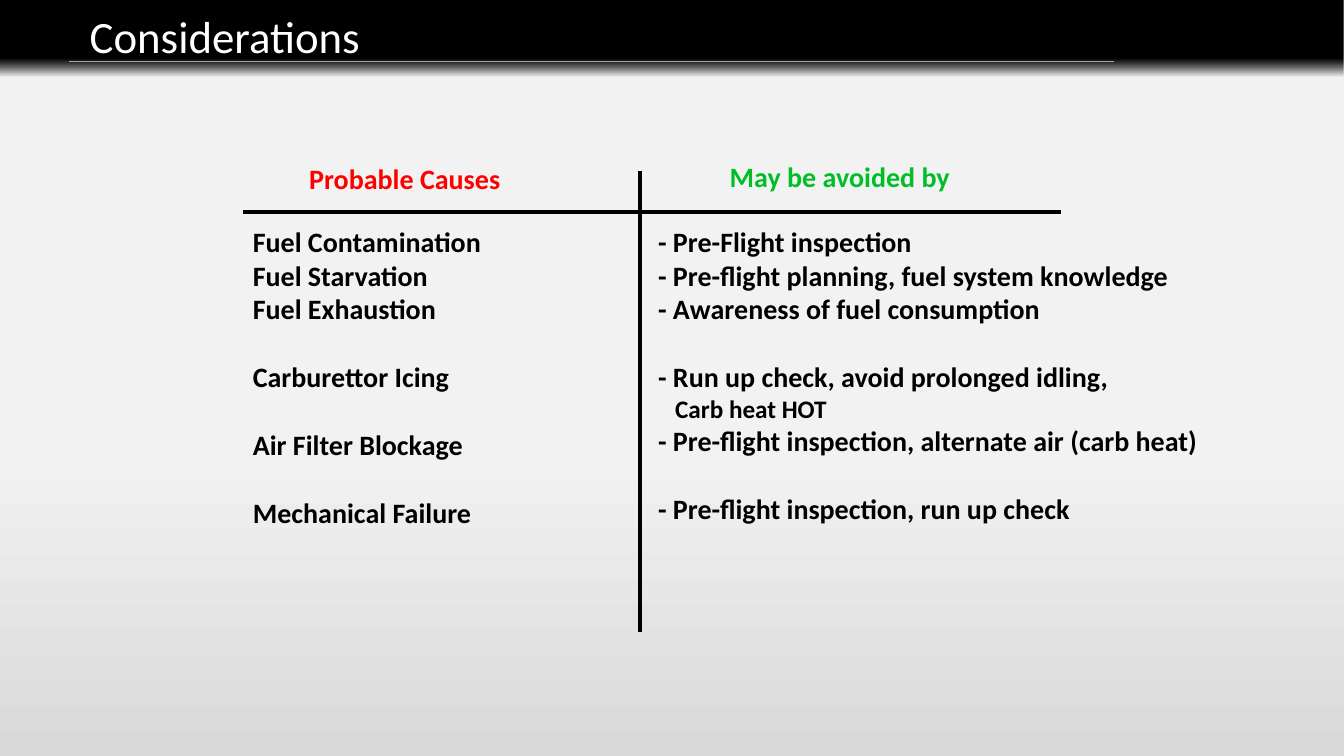
from dataclasses import dataclass

from lxml.etree import SubElement
from pptx import Presentation
from pptx.dml.color import RGBColor
from pptx.dml.fill import FillFormat
from pptx.enum.shapes import MSO_CONNECTOR, MSO_SHAPE
from pptx.enum.text import MSO_ANCHOR, MSO_AUTO_SIZE, PP_ALIGN
from pptx.oxml.ns import qn
from pptx.slide import Slide
from pptx.text.text import TextFrame
from pptx.util import Pt

FONT = "Calibri"
BLACK, WHITE, RED, GREEN, GREY = "000000", "FFFFFF", "FF0000", "00BE28", "A6A6A6"
BLANK_LINE = 24.4
SLIDE_WIDTH, SLIDE_HEIGHT = 960, 540


@dataclass
class Line:
    text: str
    size: float = 20
    before: float = 0
    indent: float = 0


@dataclass
class TextBlock:
    left: float
    top: float
    width: float
    height: float
    lines: list[Line]
    color: str = BLACK
    bold: bool = True


@dataclass
class Rule:
    x1: float
    y1: float
    x2: float
    y2: float
    color: str = BLACK
    weight: float = 3


@dataclass
class Stop:
    percent: int
    color: str
    alpha: int = 100


TITLE = TextBlock(56.9, 2.9, 738.7, 46.1, [Line("Considerations", 32)], WHITE, False)
TITLE_RULE = Rule(49, 43.9, 795.6, 43.9, GREY, 0.75)
CHART_RULES = [Rule(457.2, 122.4, 457.2, 451.4), Rule(173.5, 151.2, 758.2, 151.2)]
BLOCKS = [
    TextBlock(213.8, 111.6, 193, 31.7, [Line("Probable Causes")], RED),
    TextBlock(514.1, 110.2, 238.3, 31.7, [Line("May be avoided by")], GREEN),
    TextBlock(173.5, 157, 280, 225.4, [
        Line("Fuel Contamination"),
        Line("Fuel Starvation"),
        Line("Fuel Exhaustion"),
        Line("Carburettor Icing", before=BLANK_LINE),
        Line("Air Filter Blockage", before=BLANK_LINE),
        Line("Mechanical Failure", before=BLANK_LINE),
    ]),
    TextBlock(463, 157, 403.2, 223.2, [
        Line("- Pre-Flight inspection"),
        Line("- Pre-flight planning, fuel system knowledge"),
        Line("- Awareness of fuel consumption"),
        Line("- Run up check, avoid prolonged idling,", before=BLANK_LINE),
        Line("Carb heat HOT", size=18, indent=12.2),
        Line("- Pre-flight inspection, alternate air (carb heat)"),
        Line("- Pre-flight inspection, run up check", before=BLANK_LINE),
    ]),
]
BACKGROUND = [Stop(0, "F2F2F2"), Stop(60, "F2F2F2"), Stop(100, "D9D9D9")]
BAND = [Stop(0, BLACK), Stop(76, BLACK), Stop(88, BLACK, 55), Stop(100, BLACK, 0)]


def rgb(value: str) -> RGBColor:
    return RGBColor.from_string(value)


def set_gradient(fill: FillFormat, owner, stops: list[Stop]) -> None:
    """Fill top to bottom; owner is the XML element that holds the fill."""
    fill.gradient()
    fill.gradient_angle = 270
    stop_list = next(owner.iter(qn("a:gsLst")))
    for old in list(stop_list):
        stop_list.remove(old)
    for stop in stops:
        gs = SubElement(stop_list, qn("a:gs"), pos=str(stop.percent * 1000))
        color = SubElement(gs, qn("a:srgbClr"), val=stop.color)
        if stop.alpha < 100:
            SubElement(color, qn("a:alpha"), val=str(stop.alpha * 1000))


def write_text(tf: TextFrame, block: TextBlock) -> None:
    frame_format = {
        "word_wrap": True,
        "auto_size": MSO_AUTO_SIZE.NONE,
        "vertical_anchor": MSO_ANCHOR.TOP,
    }
    for name, value in frame_format.items():
        setattr(tf, name, value)
    for i, line in enumerate(block.lines):
        p = tf.paragraphs[0] if i == 0 else tf.add_paragraph()
        p.alignment = PP_ALIGN.LEFT
        p.space_before = Pt(line.before)
        if line.indent:
            p._p.get_or_add_pPr().set("marL", str(Pt(line.indent)))
        r = p.add_run()
        r.text = line.text
        font_format = {"name": FONT, "size": Pt(line.size), "bold": block.bold}
        for name, value in font_format.items():
            setattr(r.font, name, value)
        r.font.color.rgb = rgb(block.color)


def add_block(s: Slide, block: TextBlock) -> None:
    box = (block.left, block.top, block.width, block.height)
    write_text(s.shapes.add_textbox(*map(Pt, box)).text_frame, block)


def add_rule(s: Slide, rule: Rule) -> None:
    ends = map(Pt, (rule.x1, rule.y1, rule.x2, rule.y2))
    cxn = s.shapes.add_connector(MSO_CONNECTOR.STRAIGHT, *ends)
    cxn.line.color.rgb = rgb(rule.color)
    cxn.line.width = Pt(rule.weight)
    SubElement(cxn._element.spPr, qn("a:effectLst"))


def add_band(s: Slide) -> None:
    sp = s.shapes.add_shape(MSO_SHAPE.RECTANGLE, 0, 0, Pt(SLIDE_WIDTH), Pt(54.7))
    sp.shadow.inherit = False
    sp.line.fill.background()
    set_gradient(sp.fill, sp._element, BAND)


def place_title(s: Slide) -> None:
    """Format the title placeholder and bring it in front of the band."""
    sp = s.shapes.title
    for name in ("left", "top", "width", "height"):
        setattr(sp, name, Pt(getattr(TITLE, name)))
    write_text(sp.text_frame, TITLE)
    s.shapes._spTree.append(sp._element)


def main() -> None:
    prs = Presentation()
    prs.slide_width, prs.slide_height = Pt(SLIDE_WIDTH), Pt(SLIDE_HEIGHT)
    s = prs.slides.add_slide(prs.slide_layouts.get_by_name("Title Only"))
    set_gradient(s.background.fill, s._element, BACKGROUND)
    for rule in CHART_RULES:
        add_rule(s, rule)
    for block in BLOCKS:
        add_block(s, block)
    add_band(s)
    place_title(s)
    add_rule(s, TITLE_RULE)
    prs.save("out.pptx")


if __name__ == "__main__":
    main()
